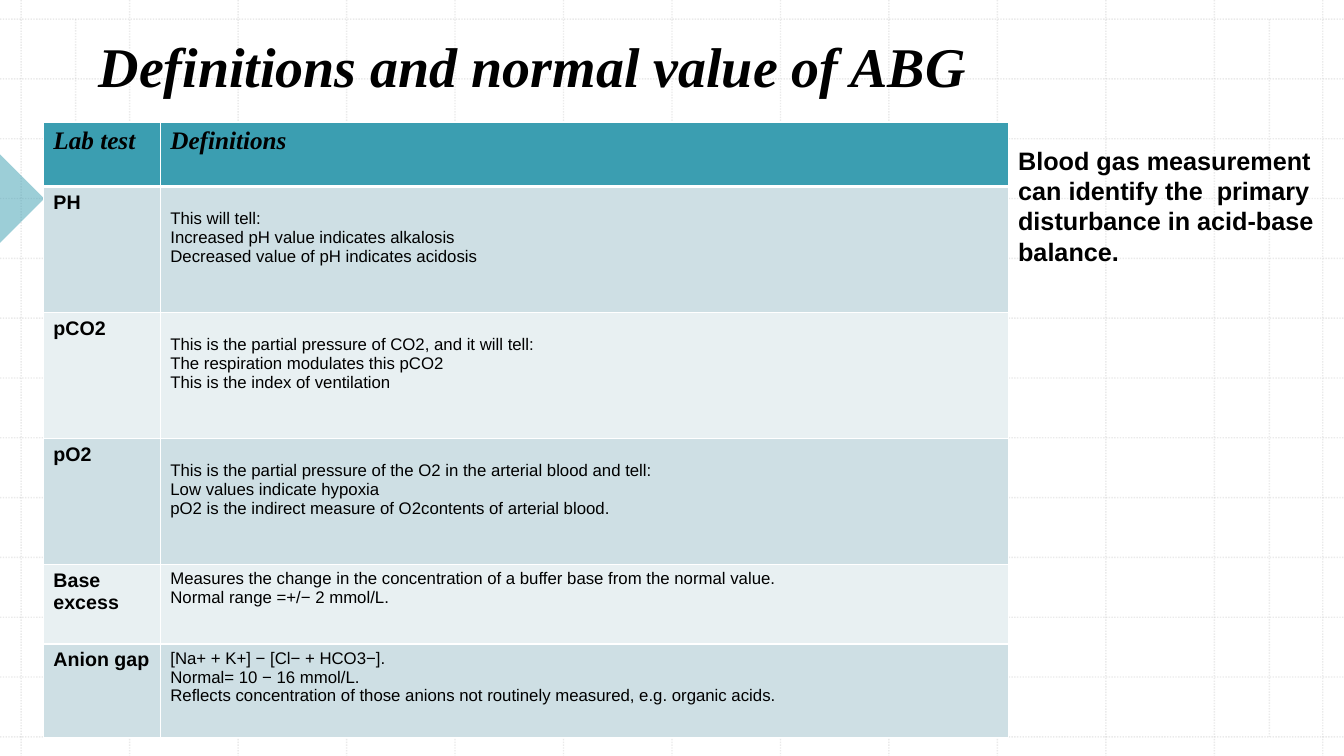
import pptx
import pptx.util
import pptx.dml.color
import pptx.enum.dml
import pptx.enum.shapes
import pptx.enum.text
import pptx.oxml
import pptx.oxml.ns
from lxml import etree

Inches = pptx.util.Inches
Pt = pptx.util.Pt

COLORS = {"teal": "3B9EB1", "band": "CEDFE4", "pale": "E8F0F2",
          "grid": "BCBCBC", "border": "FFFFFF", "text": "000000"}
SERIF, SANS = "Times New Roman", "Arial"

TITLE = "Definitions and normal value of ABG"
REMARK = ("Blood gas measurement can identify the  primary "
          "disturbance in acid-base balance.")
HEADINGS = ("Lab test", "Definitions")
LAB_TESTS = [
    ("PH", 1.25, 0.23, ["This will tell:",
                        "Increased pH value indicates alkalosis",
                        "Decreased value of pH indicates acidosis"]),
    ("pCO2", 1.25, 0.23, ["This is the partial pressure of CO2, and it will tell:",
                          "The respiration modulates this pCO2",
                          "This is the index of ventilation"]),
    ("pO2", 1.25, 0.23, ["This is the partial pressure of the O2 in the arterial blood and tell:",
                         "Low values indicate hypoxia",
                         "pO2 is the indirect measure of O2contents of arterial blood."]),
    ("Base excess", 0.79, 0.05, ["Measures the change in the concentration of a buffer base from the normal value.",
                                 "Normal range =+/− 2 mmol/L."]),
    ("Anion gap", 0.93, 0.05, ["[Na+ + K+] − [Cl− + HCO3−].",
                               "Normal= 10 − 16 mmol/L.",
                               "Reflects concentration of those anions not routinely measured, e.g. organic acids."]),
]

WIDTH, HEIGHT = 13.33, 7.5
GRID_LEFT, GRID_RIGHT, GRID_TOP, GRID_BOTTOM, GRID_STEPS = 0.21, 13.12, 0.19, 7.31, 12
INSET_LINES = (0.75, 12.59)
COLUMN_WIDTHS = (1.16, 8.41)
HEADING_HEIGHT = 0.64


def rgb(name):
    return pptx.dml.color.RGBColor.from_string(COLORS[name])


def set_alpha(properties, percent):
    color = properties.find(".//" + pptx.oxml.ns.qn("a:srgbClr"))
    etree.SubElement(color, pptx.oxml.ns.qn("a:alpha"), val=str(percent * 1000))


def add_grid_line(slide, x1, y1, x2, y2):
    grid_line = slide.shapes.add_connector(
        pptx.enum.shapes.MSO_CONNECTOR.STRAIGHT, *map(Inches, (x1, y1, x2, y2)))
    grid_line.line.color.rgb = rgb("grid")
    grid_line.line.width = Pt(1)
    grid_line.line.dash_style = pptx.enum.dml.MSO_LINE.ROUND_DOT
    properties = grid_line._element.spPr
    set_alpha(properties, 30)
    etree.SubElement(properties, pptx.oxml.ns.qn("a:effectLst"))


def write(frame, lines, size, font=SANS, bold=False, italic=False):
    frame.text = "\n".join(lines)
    frame.word_wrap = True
    for paragraph in frame.paragraphs:
        paragraph.font.size = Pt(size)
        paragraph.font.name = font
        paragraph.font.bold = bold
        paragraph.font.italic = italic
        paragraph.font.color.rgb = rgb("text")


def style_cell(cell, fill, top_width, bottom_width):
    properties = cell._tc.get_or_add_tcPr()
    for side, width in (("L", 1), ("R", 1), ("T", top_width), ("B", bottom_width)):
        properties.append(pptx.oxml.parse_xml(
            f'<a:ln{side} {pptx.oxml.ns.nsdecls("a")} w="{Pt(width)}"><a:solidFill>'
            f'<a:srgbClr val="{COLORS["border"]}"/></a:solidFill></a:ln{side}>'))
    cell.fill.solid()
    cell.fill.fore_color.rgb = rgb(fill)


def add_background(slide):
    column_gap = (GRID_RIGHT - GRID_LEFT) / GRID_STEPS
    row_gap = (GRID_BOTTOM - GRID_TOP) / GRID_STEPS
    for step in range(GRID_STEPS + 1):
        x = GRID_LEFT + step * column_gap
        y = GRID_TOP + step * row_gap
        add_grid_line(slide, x, 0, x, HEIGHT)
        add_grid_line(slide, 0, y, WIDTH, y)
    for x in INSET_LINES:
        add_grid_line(slide, x, GRID_TOP, x, GRID_BOTTOM)

    pointer = slide.shapes.add_shape(
        pptx.enum.shapes.MSO_SHAPE.RIGHT_TRIANGLE,
        Inches(-0.31), Inches(1.66), Inches(0.62), Inches(0.62))
    pointer.rotation = 225
    pointer.shadow.inherit = False
    pointer.fill.solid()
    pointer.fill.fore_color.rgb = rgb("teal")
    set_alpha(pointer._element.spPr, 50)
    pointer.line.fill.background()


def add_definitions(slide):
    heights = [HEADING_HEIGHT] + [height for _, height, _, _ in LAB_TESTS]
    definitions = slide.shapes.add_table(
        len(heights), len(COLUMN_WIDTHS), Inches(0.43), Inches(1.21),
        Inches(sum(COLUMN_WIDTHS)), Inches(sum(heights))).table
    for column, width in zip(definitions.columns, COLUMN_WIDTHS):
        column.width = Inches(width)
    for row, height in zip(definitions.rows, heights):
        row.height = Inches(height)

    for column, heading in enumerate(HEADINGS):
        cell = definitions.cell(0, column)
        write(cell.text_frame, [heading], 18, SERIF, bold=True, italic=True)
        style_cell(cell, "teal", 1, 3)
    for row, (lab_test, _, top_margin, meaning) in enumerate(LAB_TESTS, 1):
        name_cell, meaning_cell = definitions.cell(row, 0), definitions.cell(row, 1)
        write(name_cell.text_frame, [lab_test], 14, bold=True)
        write(meaning_cell.text_frame, meaning, 12)
        meaning_cell.margin_top = Inches(top_margin)
        for cell in (name_cell, meaning_cell):
            style_cell(cell, "band" if row % 2 else "pale", 3 if row == 1 else 1, 1)


def main():
    deck = pptx.Presentation()
    deck.slide_width, deck.slide_height = Inches(WIDTH), Inches(HEIGHT)
    slide = deck.slides.add_slide(deck.slide_layouts[6])
    add_background(slide)

    title = slide.shapes.add_textbox(Inches(0.88), Inches(0.19), Inches(11.48), Inches(0.84))
    write(title.text_frame, [TITLE], 40, SERIF, bold=True, italic=True)
    title.text_frame.vertical_anchor = pptx.enum.text.MSO_ANCHOR.BOTTOM

    add_definitions(slide)

    remark = slide.shapes.add_textbox(Inches(10), Inches(1.39), Inches(3.33), Inches(1.31))
    write(remark.text_frame, [REMARK], 18, bold=True)
    remark.text_frame.auto_size = pptx.enum.text.MSO_AUTO_SIZE.SHAPE_TO_FIT_TEXT
    deck.save("out.pptx")


if __name__ == "__main__":
    main()
